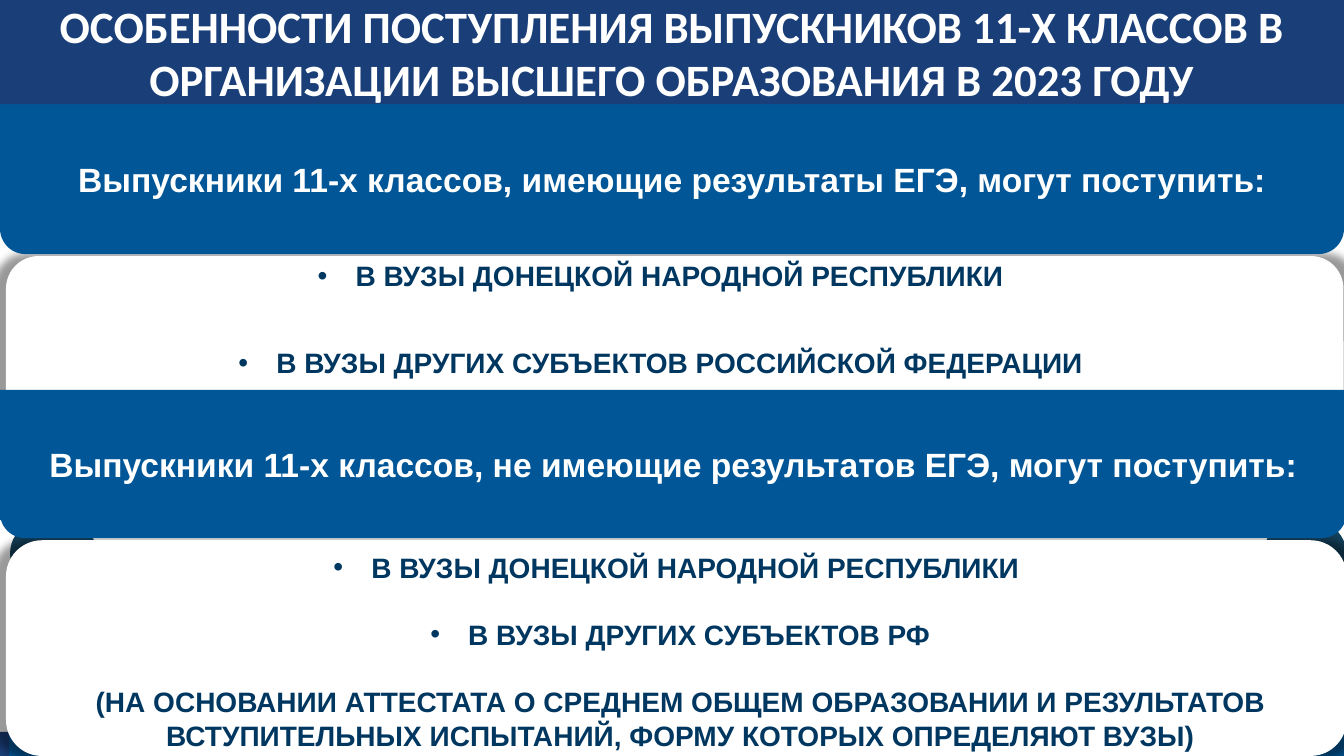
from dataclasses import dataclass

from lxml.etree import SubElement
from pptx import Presentation
from pptx.dml.color import RGBColor as RGB
from pptx.enum.shapes import MSO_SHAPE as Shape
from pptx.enum.text import MSO_ANCHOR as Anchor, PP_ALIGN as Align
from pptx.oxml.ns import qn
from pptx.util import Pt

COLORS = {"navy": "1A3E78", "blue": "005696", "dark": "14425D",
          "ink": "003760", "white": "FFFFFF", "black": "000000"}
RECT, OVAL = Shape.RECTANGLE, Shape.OVAL
CARD, BAND = Shape.ROUNDED_RECTANGLE, Shape.ROUND_2_SAME_RECTANGLE
INDENT = Pt(27)
BAND_FRAME = {"vertical_anchor": Anchor.MIDDLE, "margin_left": 0, "margin_right": 0,
              "margin_top": Pt(5), "margin_bottom": 0}
TITLE_FRAME = {"vertical_anchor": Anchor.MIDDLE}
LIST_FRAME = {"vertical_anchor": Anchor.TOP}


@dataclass
class Style:
    """Look of a text."""
    font: str
    size: int
    color: str
    frame: dict


@dataclass
class Line:
    """One paragraph."""
    text: str
    bullet: bool = False
    gap: float = 0


@dataclass
class Item:
    """One shape or text box, with its box in points."""
    box: tuple[float, float, float, float]
    kind: Shape | None = None
    fill: str = "white"
    style: Style | None = None
    lines: tuple[Line, ...] = ()


TITLE = Style("Calibri", 32, "white", TITLE_FRAME)
HEADING = Style("Arial", 24, "white", BAND_FRAME)
LIST = Style("Arial", 20, "ink", LIST_FRAME)

ITEMS = [
    Item((0, 295.2, 956.2, 76.3), RECT, "blue"),
    Item((4.3, 182.9, 955.4, 139.7), CARD),
    Item((0, 74.2, 960, 107.3), BAND, "blue", HEADING, (
        Line("Выпускники 11-х классов, имеющие результаты ЕГЭ, могут поступить:"),)),
    Item((8.6, 181.4, 926.6, 143.3), style=LIST, lines=(
        Line("В ВУЗЫ ДОНЕЦКОЙ НАРОДНОЙ РЕСПУБЛИКИ", True),
        Line("В ВУЗЫ ДРУГИХ СУБЪЕКТОВ РОССИЙСКОЙ ФЕДЕРАЦИИ", True, 38))),
    Item((0, 522.7, 960, 17.3), RECT, "navy"),
    Item((0, 0, 960, 74.5), RECT, "navy", TITLE, (
        Line("ОСОБЕННОСТИ ПОСТУПЛЕНИЯ ВЫПУСКНИКОВ 11-Х КЛАССОВ В "
             "ОРГАНИЗАЦИИ ВЫСШЕГО ОБРАЗОВАНИЯ В 2023 ГОДУ"),)),
    Item((6.5, 427, 954.7, 113), RECT, "blue"),
    Item((7.2, 368.6, 61.9, 53.3), OVAL, "dark"),
    Item((902.2, 369.4, 59.8, 54), OVAL, "dark"),
    Item((4.3, 385.9, 957.6, 154.1), CARD),
    Item((0, 278.6, 961.9, 105.8), BAND, "blue", HEADING, (
        Line("Выпускники 11-х классов, не имеющие результатов ЕГЭ, могут поступить:"),)),
    Item((23, 389.5, 925.9, 150.5), style=LIST, lines=(
        Line("В ВУЗЫ ДОНЕЦКОЙ НАРОДНОЙ РЕСПУБЛИКИ ", True),
        Line("В ВУЗЫ ДРУГИХ СУБЪЕКТОВ РФ", True, 24),
        Line("(НА ОСНОВАНИИ АТТЕСТАТА О СРЕДНЕМ ОБЩЕМ ОБРАЗОВАНИИ И РЕЗУЛЬТАТОВ "
             "ВСТУПИТЕЛЬНЫХ ИСПЫТАНИЙ, ФОРМУ КОТОРЫХ ОПРЕДЕЛЯЮТ ВУЗЫ)", gap=24))),
]


def set_all(obj: object, values: dict) -> None:
    """Set each named attribute."""
    for name, value in values.items():
        setattr(obj, name, value)


def add_glow(sp) -> None:
    """Give a card a soft shadow on all sides."""
    effects = sp._element.spPr.find(qn("a:effectLst"))
    shadow = SubElement(effects, qn("a:outerShdw"), blurRad=str(Pt(5)),
                        sx="102000", sy="102000", algn="ctr")
    color = SubElement(shadow, qn("a:srgbClr"), val=COLORS["black"])
    SubElement(color, qn("a:alpha"), val="40000")


def add_bullet(p) -> None:
    """Give a paragraph a hanging bullet."""
    pPr = p._p.get_or_add_pPr()
    pPr.set("marL", str(INDENT))
    pPr.set("indent", str(-INDENT))
    SubElement(pPr, qn("a:buFont"), typeface="Arial")
    SubElement(pPr, qn("a:buChar"), char="•")


def write(tf, style: Style, lines: tuple[Line, ...]) -> None:
    """Fill a text frame with styled paragraphs."""
    set_all(tf, {"word_wrap": True, **style.frame})
    for i, line in enumerate(lines):
        p = tf.add_paragraph() if i else tf.paragraphs[0]
        set_all(p, {"alignment": Align.CENTER, "space_before": Pt(line.gap)})
        if line.bullet:
            add_bullet(p)
        r = p.add_run()
        r.text = line.text
        set_all(r.font, {"name": style.font, "size": Pt(style.size), "bold": True})
        r.font.color.rgb = RGB.from_string(COLORS[style.color])


def draw(s, item: Item) -> None:
    """Draw one item on the slide."""
    box = [Pt(v) for v in item.box]
    if item.kind is None:
        sp = s.shapes.add_textbox(*box)
    else:
        sp = s.shapes.add_shape(item.kind, *box)
        sp.fill.solid()
        sp.fill.fore_color.rgb = RGB.from_string(COLORS[item.fill])
        sp.line.fill.background()
        sp.shadow.inherit = False
    if item.kind == CARD:
        add_glow(sp)
    if item.kind == BAND:
        sp.adjustments[0], sp.adjustments[1] = 0, 0.17
    if item.style:
        write(sp.text_frame, item.style, item.lines)


def main() -> None:
    """Build and save the slide."""
    prs = Presentation()
    set_all(prs, {"slide_width": Pt(960), "slide_height": Pt(540)})
    s = prs.slides.add_slide(prs.slide_layouts[6])
    for item in ITEMS:
        draw(s, item)
    prs.save("out.pptx")


if __name__ == "__main__":
    main()
